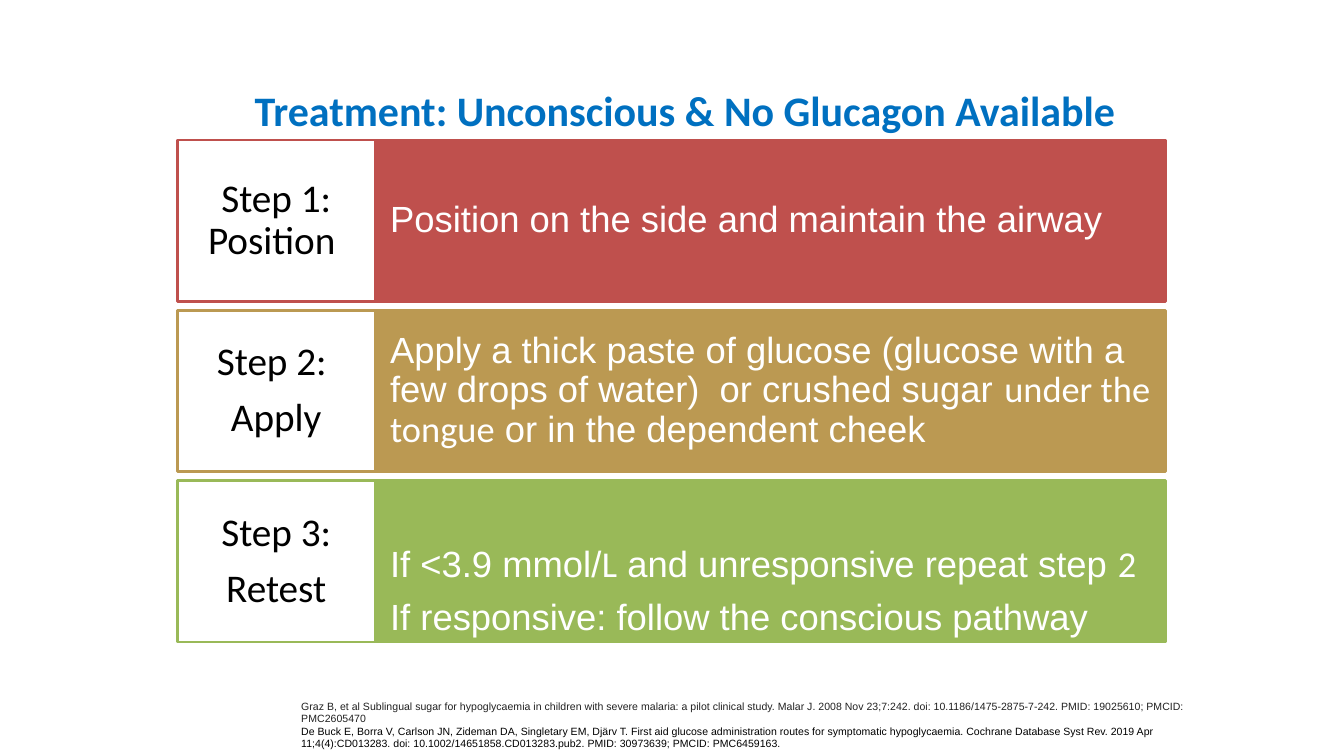
from pptx import Presentation
from pptx import util as u
from pptx.dml.color import RGBColor
from pptx.enum import shapes, text

WHITE = RGBColor(0xFF, 0xFF, 0xFF)
BLACK = RGBColor(0x00, 0x00, 0x00)
CHARCOAL = RGBColor(0x21, 0x21, 0x21)
BLUE = RGBColor(0x00, 0x70, 0xC0)
RED = RGBColor(0xBF, 0x50, 0x4D)
GOLD = RGBColor(0xBB, 0x99, 0x52)
GREEN = RGBColor(0x99, 0xB9, 0x58)

HEADING = "Calibri"
BODY = "Arial"
MIDDLE = text.MSO_ANCHOR.MIDDLE
BOTTOM = text.MSO_ANCHOR.BOTTOM
CENTER = text.PP_ALIGN.CENTER
LEFT = text.PP_ALIGN.LEFT

STEPS = [
    (RED, ["Step 1: Position "],
     [[("Position on the side and maintain the airway", BODY)]], MIDDLE),
    (GOLD, ["Step 2: ", "Apply"],
     [[("Apply a thick paste of glucose (glucose with a few drops of water)  or crushed sugar ", BODY),
       ("under the tongue", HEADING),
       (" or in the dependent cheek", BODY)]], MIDDLE),
    (GREEN, ["Step 3:", "Retest"],
     [[("If <3.9 mmol/", BODY), ("L", HEADING),
       (" and unresponsive repeat step ", BODY), ("2", HEADING)],
      [("If responsive: follow the conscious pathway", BODY)]], BOTTOM),
]

CITATIONS = [
    ("Graz B, et al Sublingual sugar for hypoglycaemia in children with severe malaria: "
     "a pilot clinical study. Malar J. 2008 Nov 23;7:242. doi: 10.1186/1475-2875-7-242. "
     "PMID: 19025610; PMCID: PMC2605470", CHARCOAL),
    ("De Buck E, Borra V, Carlson JN, Zideman DA, Singletary EM, Djärv T. First aid glucose "
     "administration routes for symptomatic hypoglycaemia. Cochrane Database Syst Rev. 2019 Apr "
     "11;4(4):CD013283. doi: 10.1002/14651858.CD013283.pub2. PMID: 30973639; PMCID: PMC6459163.",
     BLACK),
]


class Page:
    grid_left, grid_top = 1.76, 1.39
    column_width, row_height, row_pitch = 1.96, 1.6, 1.69

    def __init__(self, deck):
        self.deck = deck
        self.slide = deck.slides.add_slide(deck.slide_layouts[5])

    def share(self, left, top, width, height):
        across, down = self.deck.slide_width / 100, self.deck.slide_height / 100
        return [u.Emu(round(length)) for length in
                (left * across, top * down, width * across, height * down)]

    def cell(self, column, row, columns):
        return [u.Inches(length) for length in
                (self.grid_left + column * self.column_width,
                 self.grid_top + row * self.row_pitch,
                 columns * self.column_width, self.row_height)]

    def frame(self, shape, anchor, side, top, bottom):
        frame = shape.text_frame
        frame.word_wrap = True
        frame.auto_size = text.MSO_AUTO_SIZE.NONE
        frame.vertical_anchor = anchor
        frame.margin_left = frame.margin_right = u.Inches(side)
        frame.margin_top, frame.margin_bottom = u.Inches(top), u.Inches(bottom)
        return frame

    def paragraphs(self, frame, entries, size, align, spacing=1.0, gap=0, bold=False):
        for index, spans in enumerate(entries):
            para = frame.add_paragraph() if index else frame.paragraphs[0]
            para.alignment = align
            para.line_spacing = spacing
            para.space_before = u.Pt(gap if index else 0)
            for words, face, color in spans:
                span = para.add_run()
                span.text = words
                span.font.name = face
                span.font.size = u.Pt(size)
                span.font.bold = bold
                span.font.color.rgb = color

    def title(self, words):
        title = self.slide.shapes.title
        title.left, title.top, title.width, title.height = self.share(16.13, 10.67, 70.44, 9.33)
        title.fill.solid()
        title.fill.fore_color.rgb = WHITE
        frame = self.frame(title, text.MSO_ANCHOR.TOP, 0.07, 0.04, 0.04)
        self.paragraphs(frame, [[(words, HEADING, BLUE)]], 30, CENTER, bold=True)

    def panel(self, place, fill, line):
        panel = self.slide.shapes.add_shape(shapes.MSO_SHAPE.RECTANGLE, *place)
        panel.shadow.inherit = False
        panel.fill.solid()
        panel.fill.fore_color.rgb = fill
        panel.line.color.rgb = line
        panel.line.width = u.Pt(2)
        return panel

    def step(self, row, color, label, action, anchor):
        panel = self.panel(self.cell(1, row, 4), color, color)
        frame = self.frame(panel, anchor, 0.15, 0.04, 0.04)
        colored = [[(words, face, WHITE) for words, face in spans] for spans in action]
        self.paragraphs(frame, colored, 26, LEFT, 0.9, 9.8)

        panel = self.panel(self.cell(0, row, 1), WHITE, color)
        frame = self.frame(panel, MIDDLE, 0.1, 0.16, 0.16)
        lines = [[(words, HEADING, BLACK)] for words in label]
        self.paragraphs(frame, lines, 28, CENTER, 0.9, 9.8)

    def citations(self, entries):
        box = self.slide.shapes.add_textbox(*self.share(21.68, 91.87, 70.44, 8.13))
        frame = self.frame(box, text.MSO_ANCHOR.TOP, 0.1, 0.05, 0.05)
        lines = [[(words, BODY, color)] for words, color in entries]
        self.paragraphs(frame, lines, 7.5, LEFT)


def main():
    deck = Presentation()
    deck.slide_width, deck.slide_height = u.Inches(13.33), u.Inches(7.5)
    page = Page(deck)
    page.title("Treatment: Unconscious & No Glucagon Available ")
    for row, step in enumerate(STEPS):
        page.step(row, *step)
    page.citations(CITATIONS)
    deck.save("out.pptx")


if __name__ == "__main__":
    main()
